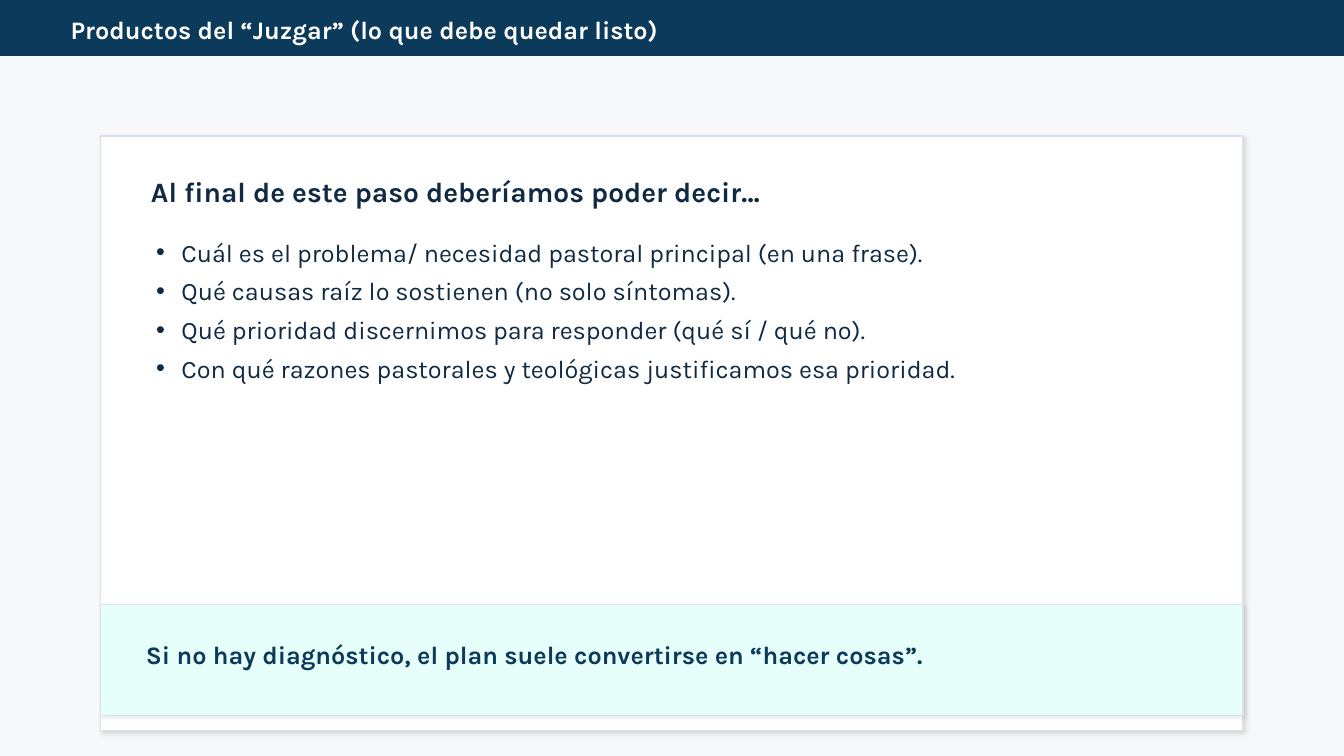
"""Build the slide that lists the products of the "Juzgar" step."""
from dataclasses import dataclass

from lxml import etree
from pptx import Presentation
from pptx.dml.color import RGBColor
from pptx.enum import shapes, text
from pptx.oxml import ns
from pptx.util import Pt

HEADING = "Productos del “Juzgar” (lo que debe quedar listo)"
LEAD = "Al final de este paso deberíamos poder decir…"
PRODUCTS = [
    "Cuál es el problema/ necesidad pastoral principal (en una frase).",
    "Qué causas raíz lo sostienen (no solo síntomas).",
    "Qué prioridad discernimos para responder (qué sí / qué no).",
    "Con qué razones pastorales y teológicas justificamos esa prioridad.",
]
WARNING = "Si no hay diagnóstico, el plan suele convertirse en “hacer cosas”."


@dataclass(frozen=True)
class Theme:
    font: str = "Karla"
    page: str = "F7F8FA"
    navy: str = "0B3A5B"
    ink: str = "102A43"
    white: str = "FFFFFF"
    mint: str = "E6FFFA"
    border: str = "D9E2EC"
    lead_size: int = 20
    text_size: int = 18


THEME = Theme()
WIDTH, HEIGHT = 960, 540
MARGIN = 72
PANEL_WIDTH = WIDTH - 2 * MARGIN
INDENT = 18


def place(shape, left, top, width, height):
    shape.left, shape.top, shape.width, shape.height = map(Pt, (left, top, width, height))


def add_panel(slide, box, fill, line, shadow=None):
    panel = slide.shapes.add_shape(shapes.MSO_SHAPE.RECTANGLE, *map(Pt, box))
    panel.fill.solid()
    panel.fill.fore_color.rgb = RGBColor.from_string(fill)
    panel.line.color.rgb = RGBColor.from_string(line)
    panel.line.width = Pt(1)
    panel.shadow.inherit = False
    if shadow:
        opacity, blur, distance = shadow
        effects = panel.element.spPr.find(ns.qn("a:effectLst"))
        outer = etree.SubElement(
            effects, ns.qn("a:outerShdw"), blurRad=str(Pt(blur)), dist=str(Pt(distance)),
            dir=str(45 * 60000), algn="bl", rotWithShape="0")
        black = etree.SubElement(outer, ns.qn("a:srgbClr"), val="000000")
        etree.SubElement(black, ns.qn("a:alpha"), val=str(opacity * 1000))


def write(shape, lines, size, color, bold=False, bullets=False):
    frame = shape.text_frame
    frame.text = "\n".join(lines)
    frame.word_wrap = True
    frame.auto_size = text.MSO_AUTO_SIZE.NONE
    frame.vertical_anchor = text.MSO_ANCHOR.TOP if bullets else text.MSO_ANCHOR.MIDDLE
    for paragraph in frame.paragraphs:
        if bullets:
            properties = paragraph._p.get_or_add_pPr()
            properties.set("marL", str(Pt(INDENT)))
            properties.set("indent", str(-Pt(INDENT)))
            etree.SubElement(properties, ns.qn("a:buChar"), char="•")
        paragraph.alignment = text.PP_ALIGN.LEFT
        paragraph.space_before = Pt(0)
        paragraph.space_after = Pt(6 if bullets else 0)
        for run in paragraph.runs:
            run.font.name = THEME.font
            run.font.size = Pt(size)
            run.font.bold = bold
            run.font.color.rgb = RGBColor.from_string(color)


def add_label(slide, box, line, size, color):
    label = slide.shapes.add_textbox(*map(Pt, box))
    write(label, [line], size, color, bold=True)


def main():
    deck = Presentation()
    deck.slide_width, deck.slide_height = Pt(WIDTH), Pt(HEIGHT)
    slide = deck.slides.add_slide(deck.slide_layouts[1])
    slide.background.fill.solid()
    slide.background.fill.fore_color.rgb = RGBColor.from_string(THEME.page)
    heading, products = slide.placeholders

    add_panel(slide, (0, 0, WIDTH, 39.6), THEME.navy, THEME.navy)
    add_panel(slide, (MARGIN, 97.2, PANEL_WIDTH, 424.8), THEME.white, THEME.border, (12, 3, 1.5))
    add_panel(slide, (MARGIN, 432, PANEL_WIDTH, 79.2), THEME.mint, THEME.border, (8, 2.5, 1.2))

    for placeholder in (heading, products):
        placeholder.element.getparent().append(placeholder.element)
    place(heading, 43.2, 8.64, 878.4, 25.2)
    write(heading, [HEADING], THEME.text_size, THEME.white, bold=True)
    place(products, 104.4, 165.6, 777.6, 259.2)
    write(products, PRODUCTS, THEME.text_size, THEME.ink, bullets=True)

    add_label(slide, (100.8, 118.8, 763.2, 36), LEAD, THEME.lead_size, THEME.ink)
    add_label(slide, (97.2, 449.28, 784.8, 36), WARNING, THEME.text_size, THEME.navy)
    deck.save("out.pptx")


if __name__ == "__main__":
    main()
